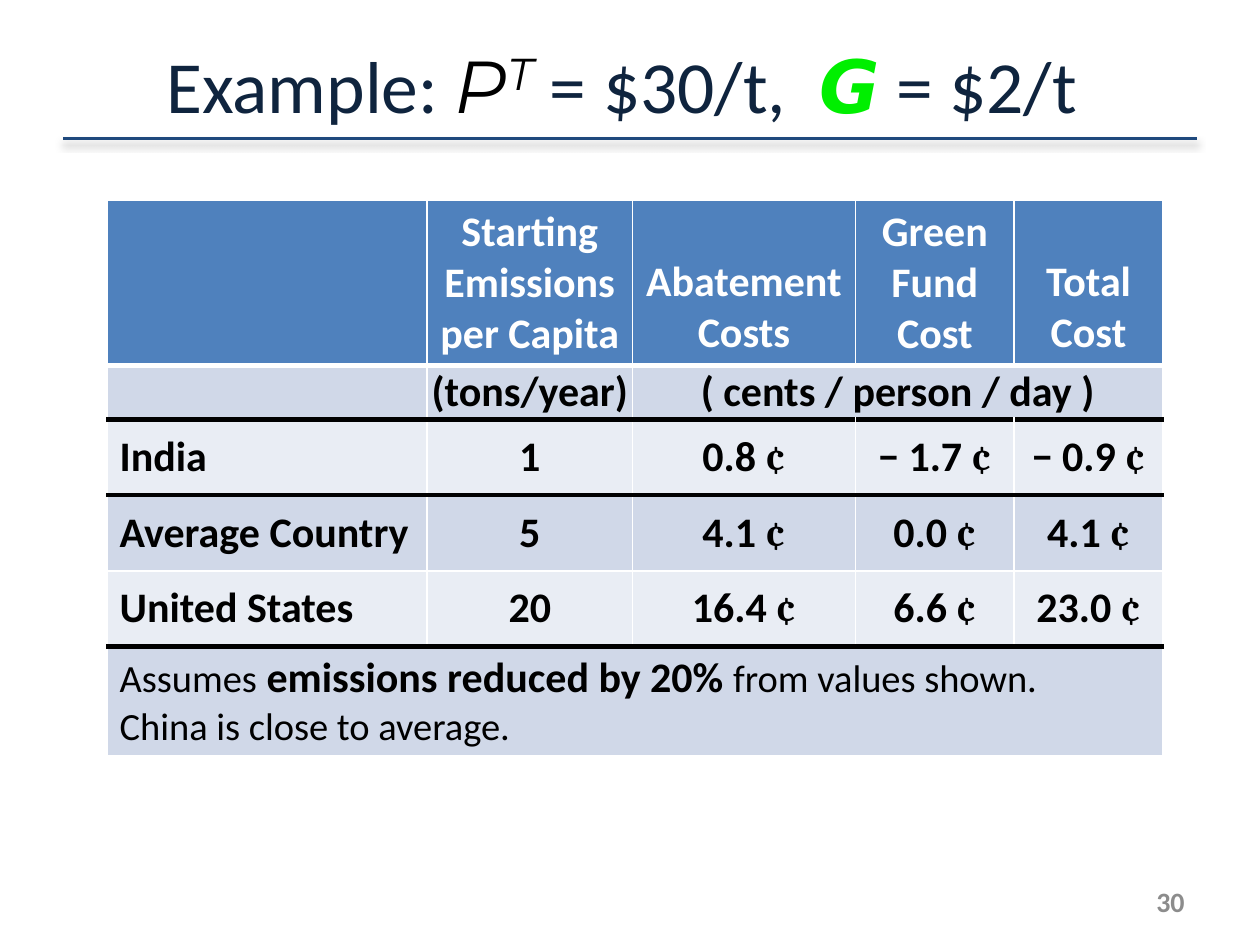
from lxml import etree
from pptx import Presentation
from pptx.dml.color import RGBColor
from pptx.enum.shapes import MSO_CONNECTOR
from pptx.enum.text import MSO_ANCHOR, PP_ALIGN
from pptx.oxml.ns import qn
from pptx.util import Inches, Pt

# Content: runs are (text, format)
BLUE, BLACK, WHITE = "0F243E", "000000", "FFFFFF"
TITLE = [
    ("Example: ", {}),
    ("P", dict(face="Montserrat", color=BLACK, italic=True)),
    ("T", dict(face="Montserrat", color=BLACK, italic=True, size=44, base=30)),
    (" = $30/t,  ", {}),
    ("G", dict(face="DejaVu Sans", color="00EF00", bold=True, italic=True)),
    (" = $2/t ", {}),
]
HEAD = ["", "Starting Emissions per Capita", "Abatement Costs",
        "Green Fund Cost", "Total Cost"]
UNITS = ["", "(tons/year)", "( cents / person / day )", "", ""]
DATA = [
    ("India", "1", "0.8", "− 1.7", "− 0.9"),
    ("Average Country", "5", "4.1", "0.0", "4.1"),
    ("United States", "20", "16.4", "6.6", "23.0"),
]
NOTE = [
    ("Assumes", dict(size=22, bold=False)),
    (" emissions reduced by 20% ", {}),
    ("from values shown.\vChina is close to average.", dict(size=22, bold=False)),
]
PAGE = "30"

COLS = [2.54, 1.63, 1.77, 1.26, 1.18]
ROWS = [1.31, 0.43, 0.6, 0.6, 0.6, 0.86]
FILLS = ["4F81BD", "D0D8E8", "E9EDF4", "D0D8E8", "E9EDF4", "D0D8E8"]
# Rules above and below each row: color, points
THIN, THICK = (WHITE, 1), (BLACK, 3)
RULES = [THIN, (WHITE, 3), THICK, THICK, THIN, THICK, THIN]


def rgb(code):
    return RGBColor.from_string(code)


def write(frame, runs, align=PP_ALIGN.CENTER, **base):
    """Fill a text frame; each run may override the shared format."""
    para = frame.paragraphs[0]
    para.alignment = align
    for text, own in runs:
        look = {**base, **own}
        para.add_run().text = ""
        run = para.runs[-1]
        parts = text.split("\v")
        for num, part in enumerate(parts):
            if num:
                para.add_line_break()
                run = para.add_run()
            run.text = part
            font = run.font
            font.name = look.get("face", "Calibri")
            font.size = Pt(look["size"])
            font.bold = look.get("bold", False)
            font.italic = look.get("italic", False)
            font.color.rgb = rgb(look["color"])
            if "base" in look:
                run._r.get_or_add_rPr().set("baseline", str(look["base"] * 1000))


def box(slide, area, runs, pads=(0.1, 0.05, 0.1, 0.05), **look):
    frame = slide.shapes.add_textbox(*map(Inches, area)).text_frame
    frame.word_wrap = True
    frame.vertical_anchor = MSO_ANCHOR.MIDDLE
    (frame.margin_left, frame.margin_top,
     frame.margin_right, frame.margin_bottom) = map(Inches, pads)
    write(frame, runs, **look)


def border(cell, rules):
    """Put the left, right, top and bottom lines ahead of the cell fill."""
    props = cell._tc.get_or_add_tcPr()
    for spot, (side, (color, width)) in enumerate(zip("LRTB", rules)):
        line = etree.Element(qn(f"a:ln{side}"), w=str(Pt(width)))
        solid = etree.SubElement(line, qn("a:solidFill"))
        etree.SubElement(solid, qn("a:srgbClr"), val=color)
        props.insert(spot, line)


def rule(slide):
    """Line under the title, with a soft shadow below."""
    line = slide.shapes.add_connector(
        MSO_CONNECTOR.STRAIGHT, Inches(0.5), Inches(1.1), Inches(9.5), Inches(1.1))
    line.line.color.rgb = rgb("1F497D")
    line.line.width = Pt(1.5)
    effect = etree.SubElement(line._element.spPr, qn("a:effectLst"))
    shade = etree.SubElement(effect, qn("a:outerShdw"), blurRad=str(Pt(4)),
                             dist=str(Pt(3)), dir="5400000", rotWithShape="0")
    color = etree.SubElement(shade, qn("a:srgbClr"), val=BLACK)
    etree.SubElement(color, qn("a:alpha"), val="40000")


def runs_for(row, col, text):
    if 2 <= row <= 4 and col >= 2:
        return [(text + " ", {}), ("¢", dict(face="Cambria"))]
    return [(text, {})] if text else []


def costs(slide):
    grid = [HEAD, UNITS, *DATA, [""] * len(COLS)]
    table = slide.shapes.add_table(
        len(ROWS), len(COLS), Inches(0.85), Inches(1.59),
        Inches(sum(COLS)), Inches(sum(ROWS))).table
    table.first_row = table.horz_banding = False
    for col, width in zip(table.columns, COLS):
        col.width = Inches(width)
    for row, height in zip(table.rows, ROWS):
        row.height = Inches(height)
    table.cell(1, 2).merge(table.cell(1, 4))
    table.cell(5, 0).merge(table.cell(5, 4))

    for r, texts in enumerate(grid):
        for c, text in enumerate(texts):
            cell = table.cell(r, c)
            cell.fill.solid()
            cell.fill.fore_color.rgb = rgb(FILLS[r])
            border(cell, [THIN, THIN, RULES[r], RULES[r + 1]])
            cell.vertical_anchor = MSO_ANCHOR.BOTTOM if r == 0 else MSO_ANCHOR.MIDDLE
            if 1 <= r <= 4 and c:
                cell.margin_left = cell.margin_right = 0
                cell.margin_top = cell.margin_bottom = 0
            write(cell.text_frame, runs_for(r, c, text), size=24, bold=True,
                  color=BLACK if r else WHITE,
                  align=PP_ALIGN.CENTER if c else PP_ALIGN.LEFT)

    note = table.cell(5, 0)
    note.vertical_anchor = MSO_ANCHOR.TOP
    write(note.text_frame, NOTE, align=PP_ALIGN.LEFT,
          size=24, bold=True, color=BLACK)


def main():
    deck = Presentation()
    deck.slide_width, deck.slide_height = Inches(10), Inches(7.5)
    slide = deck.slides.add_slide(deck.slide_layouts[6])
    rule(slide)
    box(slide, (7.17, 6.95, 2.33, 0.4), [(PAGE, {})], align=PP_ALIGN.RIGHT,
        size=16, bold=True, color="8C8C8C")
    box(slide, (0.5, 0.22, 9, 1.08), TITLE, pads=(0.1, 0, 0.1, 0.2),
        size=42, color=BLUE)
    costs(slide)
    deck.save("out.pptx")


if __name__ == "__main__":
    main()
